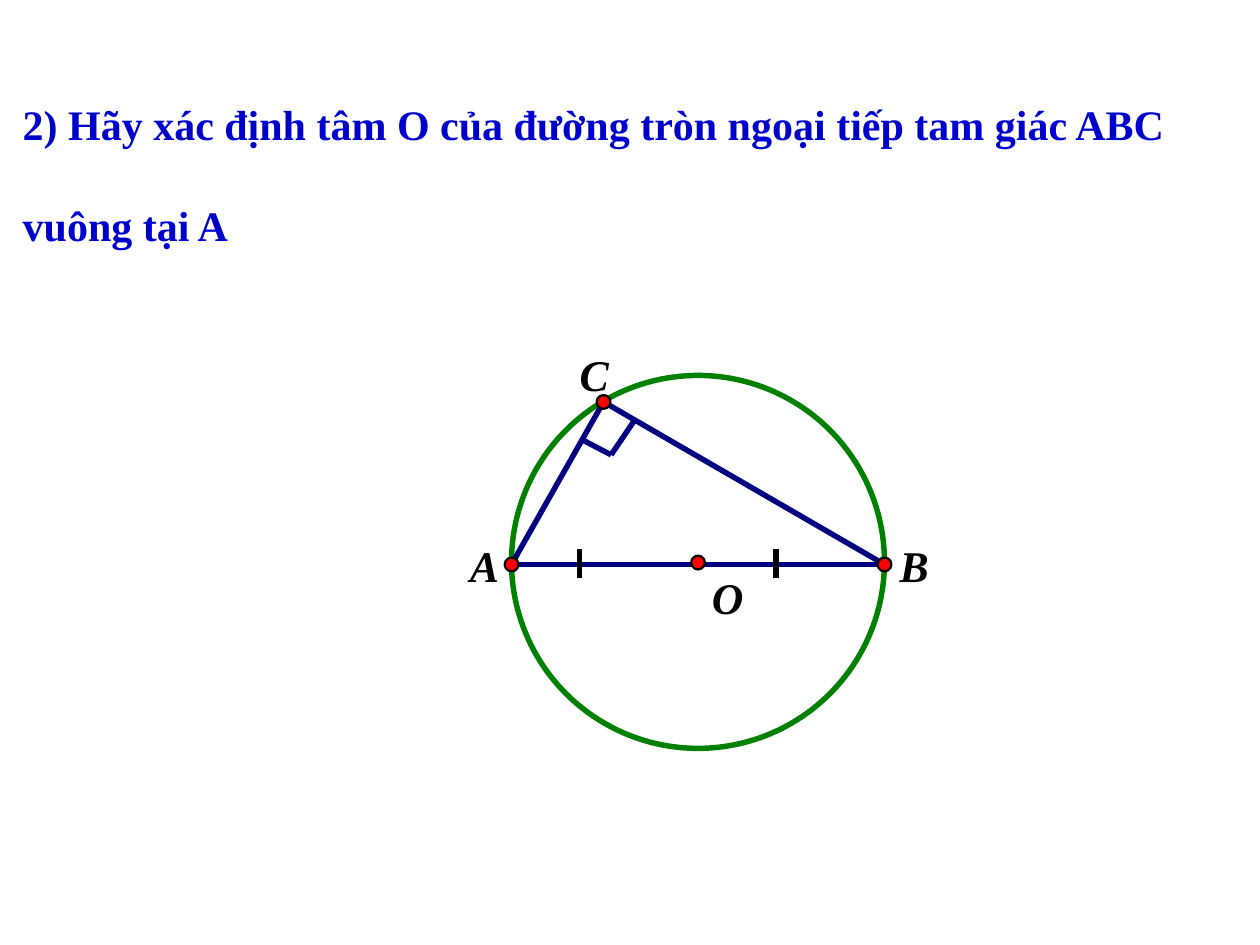
import pptx
import pptx.dml.color
import pptx.enum.shapes
import pptx.enum.text
import pptx.oxml.ns
import pptx.util
from lxml import etree
from pptx.util import Inches

# Content: all positions in inches
QUESTION = "2) Hãy xác định tâm O của đường tròn ngoại tiếp tam giác ABC vuông tại A"
QUESTION_BOX = (0.08, 0.33, 9.83, 1.72)
CIRCLE_BOX = (4.06, 2.98, 2.96, 2.96)
POINTS = {"O": (5.54, 4.465), "A": (4.06, 4.48), "B": (7.02, 4.48), "C": (4.79, 3.19)}
LABELS = {"O": (5.65, 4.53), "A": (3.73, 4.28), "B": (7.14, 4.28), "C": (4.6, 2.76)}
SIDES = ["AB", "BC", "CA"]
RIGHT_ANGLE = [(4.62, 3.49), (4.85, 3.61), (5.04, 3.33)]
TICKS_X = [6.16, 4.6]
TICK_TOP, TICK_BOTTOM = 4.36, 4.59
DOT_SIZE = 0.11
LABEL_SIZE = (0.38, 0.46)

THEME = {
    "font": "Times New Roman",
    "question": "0000CC", "circle": "008000", "triangle": "000080",
    "dot": "FF0000", "ink": "000000",
    "question_size": 24, "label_size": 25,
    "stroke": 3.13, "dot_stroke": 1.25,
}


def rgb(key):
    return pptx.dml.color.RGBColor.from_string(THEME[key])


def write(frame, text, *, size, color, italic=False, spacing=None, before=0):
    frame.word_wrap = True
    frame.vertical_anchor = pptx.enum.text.MSO_ANCHOR.TOP
    paragraph = frame.paragraphs[0]
    paragraph.alignment = pptx.enum.text.PP_ALIGN.LEFT
    paragraph.space_before = pptx.util.Pt(before)
    paragraph.line_spacing = spacing
    run = paragraph.add_run()
    run.text = text
    run.font.name = THEME["font"]
    run.font.size = pptx.util.Pt(THEME[size])
    run.font.bold = True
    run.font.italic = italic
    run.font.color.rgb = rgb(color)


def draw_ellipse(shapes, box, color, stroke, fill=None):
    ellipse = shapes.add_shape(pptx.enum.shapes.MSO_SHAPE.OVAL, *map(Inches, box))
    ellipse.shadow.inherit = False
    if fill:
        ellipse.fill.solid()
        ellipse.fill.fore_color.rgb = rgb(fill)
    else:
        ellipse.fill.background()
    ellipse.line.color.rgb = rgb(color)
    ellipse.line.width = pptx.util.Pt(THEME[stroke])


def draw_line(shapes, start, end, color):
    line = shapes.add_connector(
        pptx.enum.shapes.MSO_CONNECTOR.STRAIGHT, *map(Inches, (*start, *end)))
    line.line.color.rgb = rgb(color)
    line.line.width = pptx.util.Pt(THEME["stroke"])
    etree.SubElement(line._element.spPr, pptx.oxml.ns.qn("a:effectLst"))


def draw_label(shapes, name):
    label = shapes.add_textbox(*map(Inches, (*LABELS[name], *LABEL_SIZE)))
    frame = label.text_frame
    frame.margin_left = frame.margin_right = frame.margin_top = frame.margin_bottom = 0
    write(frame, name, size="label_size", color="ink", italic=True)


def main():
    deck = pptx.Presentation()
    deck.slide_width, deck.slide_height = Inches(10), Inches(7.5)
    slide = deck.slides.add_slide(deck.slide_layouts.get_by_name("Title Only"))

    # Question
    question = slide.shapes.title
    question.left, question.top, question.width, question.height = map(Inches, QUESTION_BOX)
    question.text_frame.auto_size = pptx.enum.text.MSO_AUTO_SIZE.NONE
    write(question.text_frame, QUESTION, size="question_size", color="question",
          spacing=2.0, before=4.8)

    # Circle, triangle and right-angle mark
    figure = slide.shapes.add_group_shape().shapes
    draw_ellipse(figure, CIRCLE_BOX, "circle", "stroke")
    for start, end in SIDES:
        draw_line(figure, POINTS[start], POINTS[end], "triangle")
    for start, end in zip(RIGHT_ANGLE, RIGHT_ANGLE[1:]):
        draw_line(figure, start, end, "triangle")

    # Equal-length ticks on AB
    for x in TICKS_X:
        draw_line(figure, (x, TICK_BOTTOM), (x, TICK_TOP), "ink")

    # Points and their labels
    for name, (x, y) in POINTS.items():
        dot_box = (x - DOT_SIZE / 2, y - DOT_SIZE / 2, DOT_SIZE, DOT_SIZE)
        draw_ellipse(figure, dot_box, "ink", "dot_stroke", fill="dot")
        draw_label(figure, name)

    deck.save("out.pptx")


if __name__ == "__main__":
    main()
